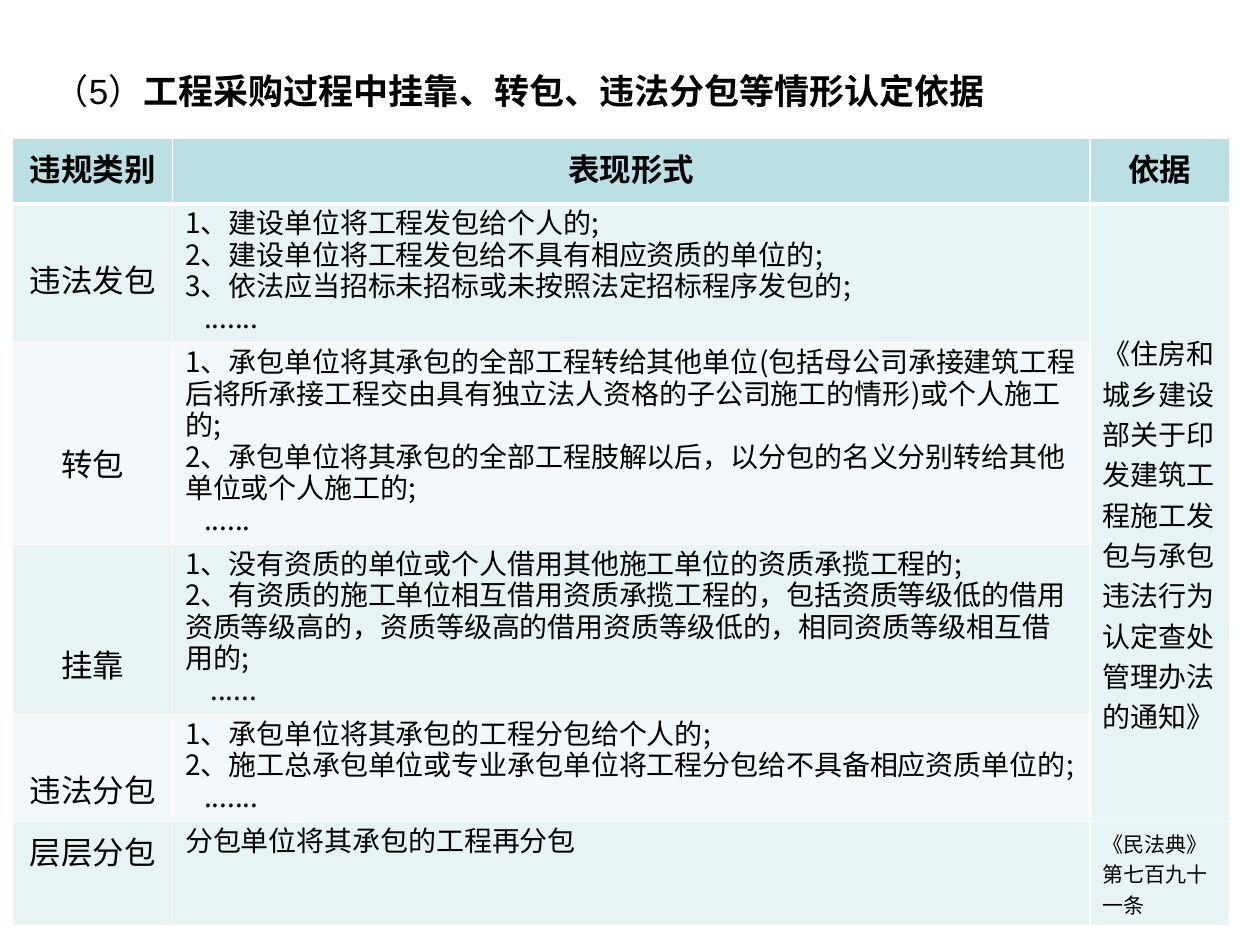
"""Build the slide on how illegal contracting practices are identified."""
from dataclasses import dataclass

from lxml import etree
from pptx import Presentation
from pptx.dml.color import RGBColor
from pptx.enum.text import MSO_AUTO_SIZE, PP_ALIGN
from pptx.oxml.ns import qn
from pptx.util import Inches, Pt

CENTER, LEFT = PP_ALIGN.CENTER, PP_ALIGN.LEFT
GROW = MSO_AUTO_SIZE.SHAPE_TO_FIT_TEXT


@dataclass(frozen=True)
class Theme:
    ink: str = "000000"
    border: str = "FFFFFF"
    header: str = "BBE0E3"
    bands: tuple = ("E7F3F4", "F3F9FA")
    latin: str = "Arial"
    cjk: str = "Noto Sans CJK SC"
    title: int = 20
    label: int = 18
    body: int = 16
    note: int = 12
    leading: int = 18
    thin: int = 1
    thick: int = 3


class SlideBuilder:
    def __init__(self, slide, theme):
        self.slide = slide
        self.theme = theme

    def style(self, font, size, name=None, bold=False):
        font.size = Pt(size)
        font.name = name or self.theme.cjk
        font.bold = bold
        font.color.rgb = RGBColor.from_string(self.theme.ink)

    def title(self, number, heading, left, top, width, height):
        box = self.slide.shapes.add_textbox(*map(Inches, (left, top, width, height)))
        frame = box.text_frame
        frame.word_wrap = True
        frame.auto_size = GROW
        paragraph = frame.paragraphs[0]
        for text, name, bold in ((number, self.theme.latin, False), (heading, self.theme.cjk, True)):
            run = paragraph.add_run()
            run.text = text
            self.style(run.font, self.theme.title, name, bold)

    def table(self, left, top, widths, heights):
        size = (left, top, sum(widths), sum(heights))
        grid = self.slide.shapes.add_table(len(heights), len(widths), *map(Inches, size)).table
        grid.horz_banding = False
        for column, width in zip(grid.columns, widths):
            column.width = Inches(width)
        for row, height in zip(grid.rows, heights):
            row.height = Inches(height)
        for index, row in enumerate(grid.rows):
            fill = self.theme.bands[(index - 1) % 2] if index else self.theme.header
            for cell in row.cells:
                self.borders(cell, index)
                self.fill(cell, fill)
        return grid

    def fill(self, cell, color):
        cell.fill.solid()
        cell.fill.fore_color.rgb = RGBColor.from_string(color)

    def borders(self, cell, row):
        properties = cell._tc.get_or_add_tcPr()
        for side in ("lnL", "lnR", "lnT", "lnB"):
            below_header = (row, side) in ((0, "lnB"), (1, "lnT"))
            weight = self.theme.thick if below_header else self.theme.thin
            line = etree.SubElement(properties, qn(f"a:{side}"), w=str(Pt(weight)))
            solid = etree.SubElement(line, qn("a:solidFill"))
            etree.SubElement(solid, qn("a:srgbClr"), val=self.theme.border)

    def label(self, cell, text, size, align=LEFT, name=None, bold=False, drop=0.05):
        cell.margin_top = Inches(drop)
        paragraph = cell.text_frame.paragraphs[0]
        paragraph.text = text
        paragraph.alignment = align
        self.style(paragraph.font, size, name, bold)

    def forms(self, cell, lines, dots_indent):
        frame = cell.text_frame
        for index, line in enumerate(lines):
            paragraph = frame.add_paragraph() if index else frame.paragraphs[0]
            paragraph.text = line
            paragraph.line_spacing = Pt(self.theme.leading)
            if line.startswith("."):
                paragraph._p.get_or_add_pPr().set("marL", str(Inches(dots_indent)))
            self.style(paragraph.font, self.theme.body)


HEADERS = ("违规类别", "表现形式", "依据")
CATEGORIES = (
    ("违法发包", 0.41, 0.15, (
        "1、建设单位将工程发包给个人的;",
        "2、建设单位将工程发包给不具有相应资质的单位的;",
        "3、依法应当招标未招标或未按照法定招标程序发包的;",
        ".......")),
    ("转包", 0.77, 0.15, (
        "1、承包单位将其承包的全部工程转给其他单位(包括母公司承接建筑工程后将所承接工程"
        "交由具有独立法人资格的子公司施工的情形)或个人施工的;",
        "2、承包单位将其承包的全部工程肢解以后，以分包的名义分别转给其他单位或个人施工的;",
        "......")),
    ("挂靠", 0.77, 0.2, (
        "1、没有资质的单位或个人借用其他施工单位的资质承揽工程的;",
        "2、有资质的施工单位相互借用资质承揽工程的，包括资质等级低的借用资质等级高的，"
        "资质等级高的借用资质等级低的，相同资质等级相互借用的;",
        "......")),
    ("违法分包", 0.41, 0.15, (
        "1、承包单位将其承包的工程分包给个人的;",
        "2、施工总承包单位或专业承包单位将工程分包给不具备相应资质单位的;",
        ".......")),
    ("层层分包", 0.05, 0, ("分包单位将其承包的工程再分包",)),
)
NOTICE = "《住房和城乡建设部关于印发建筑工程施工发包与承包违法行为认定查处管理办法的通知》"
CIVIL_CODE = "《民法典》第七百九十一条"


def main():
    deck = Presentation()
    deck.slide_width, deck.slide_height = Inches(10), Inches(7.5)
    theme = Theme()
    builder = SlideBuilder(deck.slides.add_slide(deck.slide_layouts[6]), theme)

    grid = builder.table(0.1, 1.1, (1.27, 7.28, 1.11), (0.52, 1.1, 1.6, 1.35, 0.85, 0.65))
    for column, header in enumerate(HEADERS):
        builder.label(grid.cell(0, column), header, theme.label, CENTER, theme.latin, bold=True)
    for row, (category, drop, dots_indent, lines) in enumerate(CATEGORIES, start=1):
        builder.label(grid.cell(row, 0), category, theme.label, CENTER, drop=drop)
        builder.forms(grid.cell(row, 1), lines, dots_indent)

    notice_cell = grid.cell(1, 2)
    notice_cell.merge(grid.cell(4, 2))
    builder.label(notice_cell, NOTICE, theme.body, drop=1.02)
    builder.label(grid.cell(5, 2), CIVIL_CODE, theme.note)

    builder.title("（5）", "工程采购过程中挂靠、转包、违法分包等情形认定依据", 0.33, 0.5, 8.53, 0.44)
    deck.save("out.pptx")


if __name__ == "__main__":
    main()
